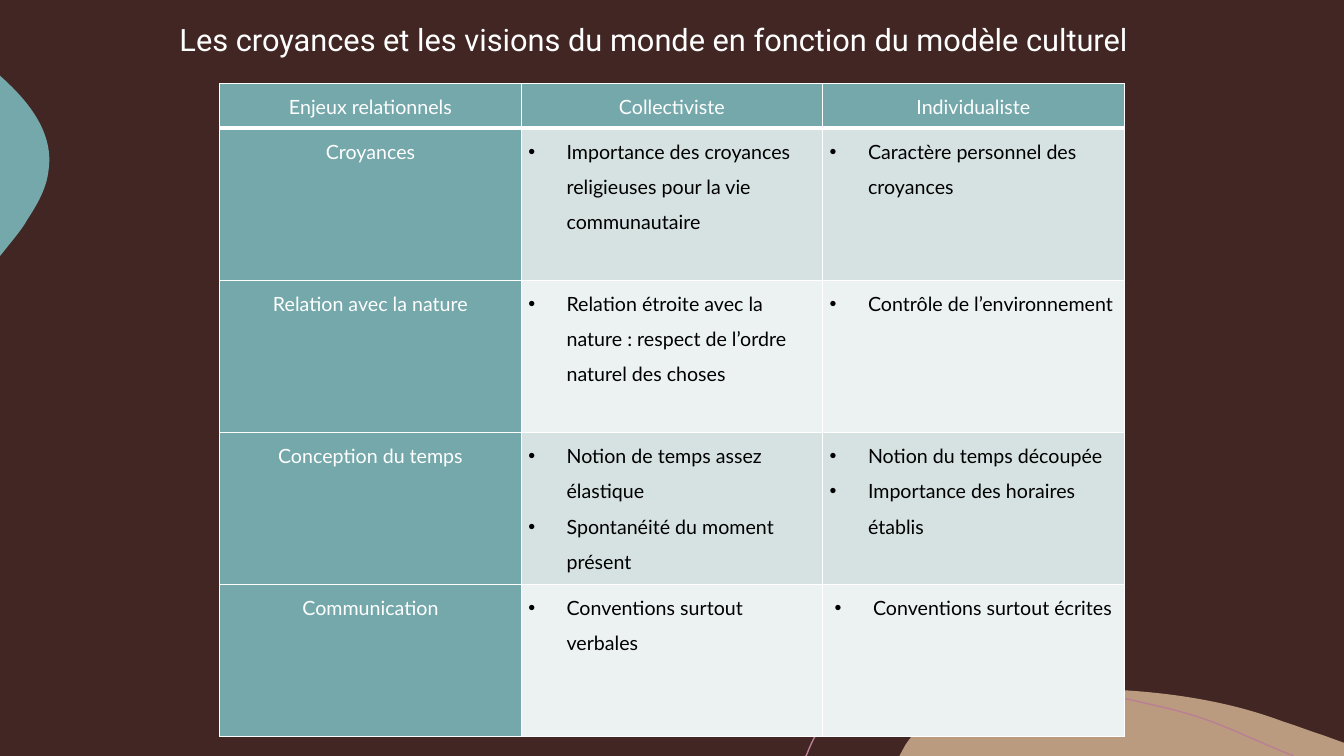
import pptx
import pptx.dml.color
import pptx.enum.text
import pptx.oxml
import pptx.oxml.ns
import pptx.util

EMU_PER_PX = 9144  # 100 px to the inch
COLORS = {
    "background": "412624",
    "teal": "75A8AB",
    "tan": "BA9B7F",
    "mauve": "BA7F94",
    "band_dark": "D6E1E2",
    "band_light": "ECF1F1",
    "white": "FFFFFF",
    "black": "000000",
}
LEFT = pptx.enum.text.PP_ALIGN.LEFT
CENTER = pptx.enum.text.PP_ALIGN.CENTER

TITLE = "Les croyances et les visions du monde en fonction du modèle culturel"
HEADERS = ["Enjeux relationnels", "Collectiviste", "Individualiste"]
ROWS = [
    ("Croyances",
     ["Importance des croyances religieuses pour la vie communautaire"],
     ["Caractère personnel des croyances"]),
    ("Relation avec la nature",
     ["Relation étroite avec la nature : respect de l’ordre naturel des choses"],
     ["Contrôle de l’environnement"]),
    ("Conception du temps",
     ["Notion de temps assez élastique", "Spontanéité du moment présent"],
     ["Notion du temps découpée", "Importance des horaires établis"]),
    ("Communication",
     ["Conventions surtout verbales"],
     ["Conventions surtout écrites"]),
]
CENTERED_BULLETS = {"Conventions surtout écrites"}

# Each outline is a start point, then segments: 2 numbers for a line, 6 for a curve.
TAN_HILL = [
    (1054, 683), (1128, 683, 1204, 690, 1273, 716), (1286, 720, 1298, 725, 1311, 729),
    (1333, 737), (1333, 750), (892, 750), (898, 739), (902, 733, 906, 728, 911, 723),
    (939, 693, 982, 684, 1023, 683), (1033, 683, 1043, 683, 1054, 683),
]
TEAL_BLOB = [
    (0, 75), (1, 76), (30, 102, 54, 133, 48, 170), (46, 187, 37, 203, 27, 218),
    (24, 224, 17, 233, 8, 244), (0, 254),
]
MAUVE_CURVE = [
    (799, 750), (800, 749), (806, 733, 814, 719, 824, 708), (850, 681, 889, 673, 926, 672),
    (955, 672), (1022, 672, 1100, 689, 1155, 702), (1209, 715, 1226, 727, 1283, 750),
]


def px(value):
    return pptx.util.Emu(value * EMU_PER_PX)


def rgb(name):
    return pptx.dml.color.RGBColor.from_string(COLORS[name])


def bend_segments(shape, segments):
    """Replace the straight segments that should be cubic curves."""
    lines = list(shape._element.iter(pptx.oxml.ns.qn("a:lnTo")))
    for line, segment in zip(lines, segments):
        if len(segment) == 6:
            points = "".join(
                f'<a:pt x="{px(x) - shape.left}" y="{px(y) - shape.top}"/>'
                for x, y in zip(segment[::2], segment[1::2]))
            line.getparent().replace(line, pptx.oxml.parse_xml(
                f'<a:cubicBezTo {pptx.oxml.ns.nsdecls("a")}>{points}</a:cubicBezTo>'))


def add_outline(slide, outline, fill=None, line=None):
    (start_x, start_y), *segments = outline
    builder = slide.shapes.build_freeform(px(start_x), px(start_y))
    builder.add_line_segments(
        [(px(segment[-2]), px(segment[-1])) for segment in segments], close=fill is not None)
    shape = builder.convert_to_shape()
    bend_segments(shape, segments)
    shape.shadow.inherit = False
    if fill:
        shape.fill.solid()
        shape.fill.fore_color.rgb = rgb(fill)
    else:
        shape.fill.background()
    if line:
        shape.line.color.rgb = rgb(line)
        shape.line.width = pptx.util.Pt(1)
    else:
        shape.line.fill.background()


def format_paragraph(paragraph, font, size, color, alignment, spacing):
    paragraph.alignment = alignment
    paragraph.line_spacing = spacing
    paragraph.font.name = font
    paragraph.font.size = pptx.util.Pt(size)
    paragraph.font.color.rgb = rgb(color)


def add_bullet(paragraph):
    properties = paragraph._p.get_or_add_pPr()
    properties.set("marL", str(px(38)))
    properties.set("indent", str(px(-38)))
    run_defaults = properties.find(pptx.oxml.ns.qn("a:defRPr"))
    for tag in ('buFont {} typeface="Arial"', 'buChar {} char="•"'):
        run_defaults.addprevious(pptx.oxml.parse_xml(
            f'<a:{tag.format(pptx.oxml.ns.nsdecls("a"))}/>'))


def set_borders(cell, bottom):
    properties = cell._tc.get_or_add_tcPr()
    widths = {"lnL": 1, "lnR": 1, "lnT": 1, "lnB": bottom}
    for index, (side, width) in enumerate(widths.items()):
        properties.insert(index, pptx.oxml.parse_xml(
            f'<a:{side} {pptx.oxml.ns.nsdecls("a")} w="{pptx.util.Pt(width)}"><a:solidFill>'
            f'<a:srgbClr val="{COLORS["white"]}"/></a:solidFill></a:{side}>'))


def fill_cell(cell, lines, fill, color, bulleted=False, bottom=1):
    cell.margin_left = cell.margin_right = px(7)
    cell.margin_top = cell.margin_bottom = 0
    cell.fill.solid()
    cell.fill.fore_color.rgb = rgb(fill)
    set_borders(cell, bottom)
    cell.text_frame.text = "\n".join(lines)
    for paragraph in cell.text_frame.paragraphs:
        centered = not bulleted or paragraph.text in CENTERED_BULLETS
        format_paragraph(paragraph, "Lato", 14, color, CENTER if centered else LEFT, 1.5)
        if bulleted:
            add_bullet(paragraph)


def add_title(slide):
    title = slide.shapes.title
    title.left, title.top, title.width, title.height = px(168), px(-22), px(1167), px(167)
    frame = title.text_frame
    frame.text = TITLE
    frame.vertical_anchor = pptx.enum.text.MSO_ANCHOR.MIDDLE
    frame.margin_top, frame.margin_bottom = px(5), px(46)
    format_paragraph(frame.paragraphs[0], "Roboto", 22, "white", LEFT, 0.9)


def add_comparison_table(slide):
    table = slide.shapes.add_table(
        len(ROWS) + 1, len(HEADERS), px(218), px(83), px(897), px(648)).table
    table.first_row = table.horz_banding = False
    for column in table.columns:
        column.width = px(299)
    for index, row in enumerate(table.rows):
        row.height = px(151 if index else 44)
    for index, header in enumerate(HEADERS):
        fill_cell(table.cell(0, index), [header], "teal", "white", bottom=3)
    for index, (topic, *views) in enumerate(ROWS, start=1):
        fill_cell(table.cell(index, 0), [topic], "teal", "white")
        band = "band_dark" if index % 2 else "band_light"
        for column, view in enumerate(views, start=1):
            fill_cell(table.cell(index, column), view, band, "black", bulleted=True)


def main():
    presentation = pptx.Presentation()
    presentation.slide_width, presentation.slide_height = px(1333), px(750)
    slide = presentation.slides.add_slide(presentation.slide_layouts[5])
    slide.background.fill.solid()
    slide.background.fill.fore_color.rgb = rgb("background")
    add_outline(slide, TAN_HILL, fill="tan")
    add_outline(slide, TEAL_BLOB, fill="teal")
    add_outline(slide, MAUVE_CURVE, line="mauve")
    add_title(slide)
    add_comparison_table(slide)
    presentation.save("out.pptx")


if __name__ == "__main__":
    main()
